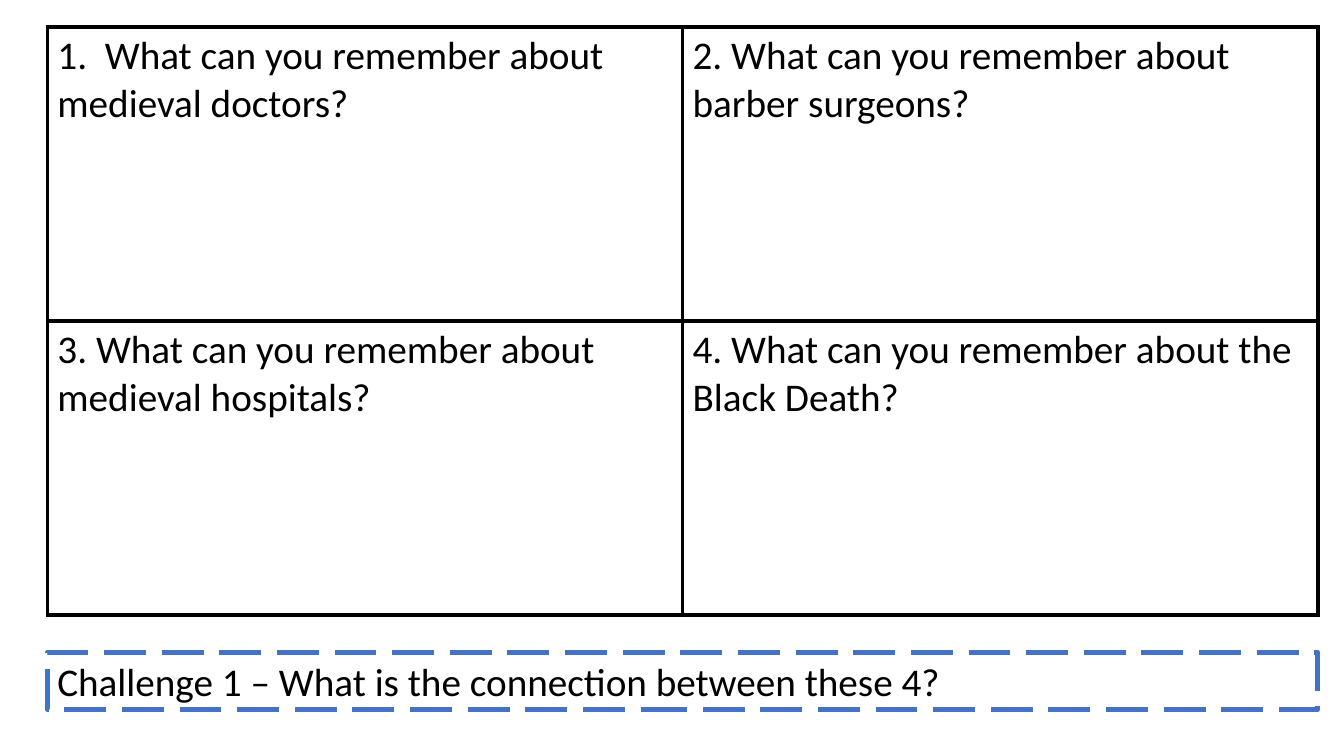
from lxml.etree import SubElement
from pptx import Presentation
from pptx.dml.color import RGBColor
from pptx.enum.dml import MSO_LINE
from pptx.enum.shapes import MSO_SHAPE
from pptx.enum.text import MSO_ANCHOR, MSO_AUTO_SIZE, PP_ALIGN
from pptx.oxml.ns import qn
from pptx.util import Inches, Pt

BLACK = RGBColor(0x00, 0x00, 0x00)
WHITE = RGBColor(0xFF, 0xFF, 0xFF)
BLUE = RGBColor(0x44, 0x72, 0xC4)

LEFT = Inches(0.47)
WIDTH = Inches(12.6)

QUESTIONS = [
    ["1.  What can you remember about medieval doctors?",
     "2. What can you remember about barber surgeons?"],
    ["3. What can you remember about medieval hospitals?",
     "4. What can you remember about the Black Death?"],
]
CHALLENGE = "Challenge 1 – What is the connection between these 4?"


def write_text(text_frame, text):
    text_frame.text = text
    paragraph = text_frame.paragraphs[0]
    paragraph.alignment = PP_ALIGN.LEFT
    paragraph.font.name = "Calibri"
    paragraph.font.size = Pt(28)
    paragraph.font.color.rgb = BLACK


def set_borders(cell, color, width):
    properties = cell._tc.get_or_add_tcPr()
    for position, side in enumerate(("a:lnL", "a:lnR", "a:lnT", "a:lnB")):
        border = SubElement(properties, qn(side), w=str(width))
        properties.insert(position, border)
        fill = SubElement(border, qn("a:solidFill"))
        SubElement(fill, qn("a:srgbClr"), val=str(color))


def add_question_grid(slide, questions):
    row_count, column_count = len(questions), len(questions[0])
    frame = slide.shapes.add_table(
        row_count, column_count, LEFT, Inches(0.27), WIDTH, Inches(5.83))
    table = frame.table
    table.first_row = False
    table.horz_banding = False
    for row, row_questions in enumerate(questions):
        for column, question in enumerate(row_questions):
            cell = table.cell(row, column)
            cell.fill.solid()
            cell.fill.fore_color.rgb = WHITE
            set_borders(cell, BLACK, Pt(3))
            write_text(cell.text_frame, question)


def add_challenge_box(slide, text):
    shape = slide.shapes.add_shape(
        MSO_SHAPE.RECTANGLE, LEFT, Inches(6.47), WIDTH, Inches(0.57))
    shape.shadow.inherit = False
    shape.fill.solid()
    shape.fill.fore_color.rgb = WHITE
    shape.line.color.rgb = BLUE
    shape.line.width = Pt(3.75)
    shape.line.dash_style = MSO_LINE.LONG_DASH
    text_frame = shape.text_frame
    text_frame.word_wrap = True
    text_frame.auto_size = MSO_AUTO_SIZE.SHAPE_TO_FIT_TEXT
    text_frame.vertical_anchor = MSO_ANCHOR.TOP
    write_text(text_frame, text)


def main():
    presentation = Presentation()
    presentation.slide_width = Inches(13.33)
    presentation.slide_height = Inches(7.5)
    slide = presentation.slides.add_slide(presentation.slide_layouts[6])
    add_question_grid(slide, QUESTIONS)
    add_challenge_box(slide, CHALLENGE)
    presentation.save("out.pptx")


if __name__ == "__main__":
    main()
